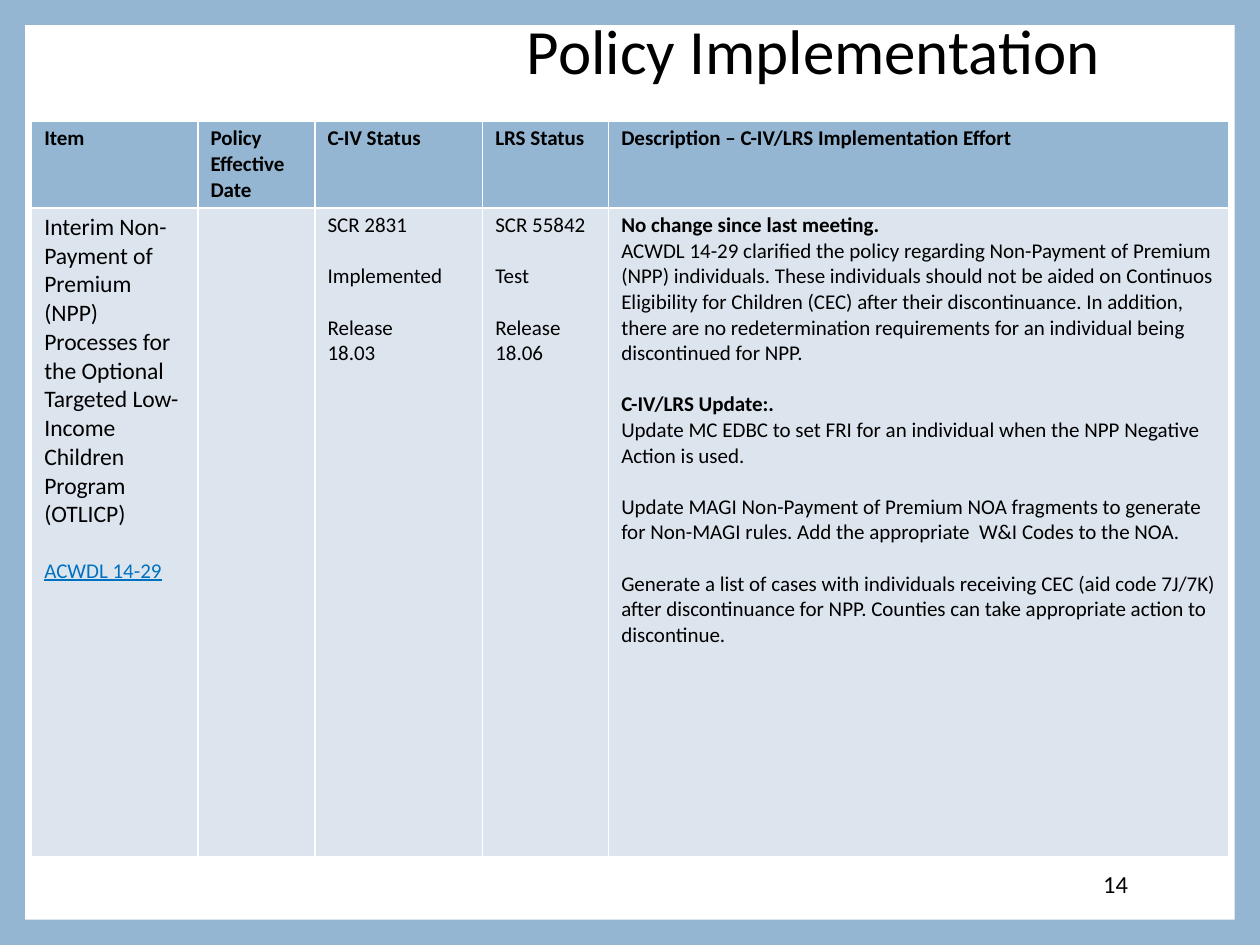
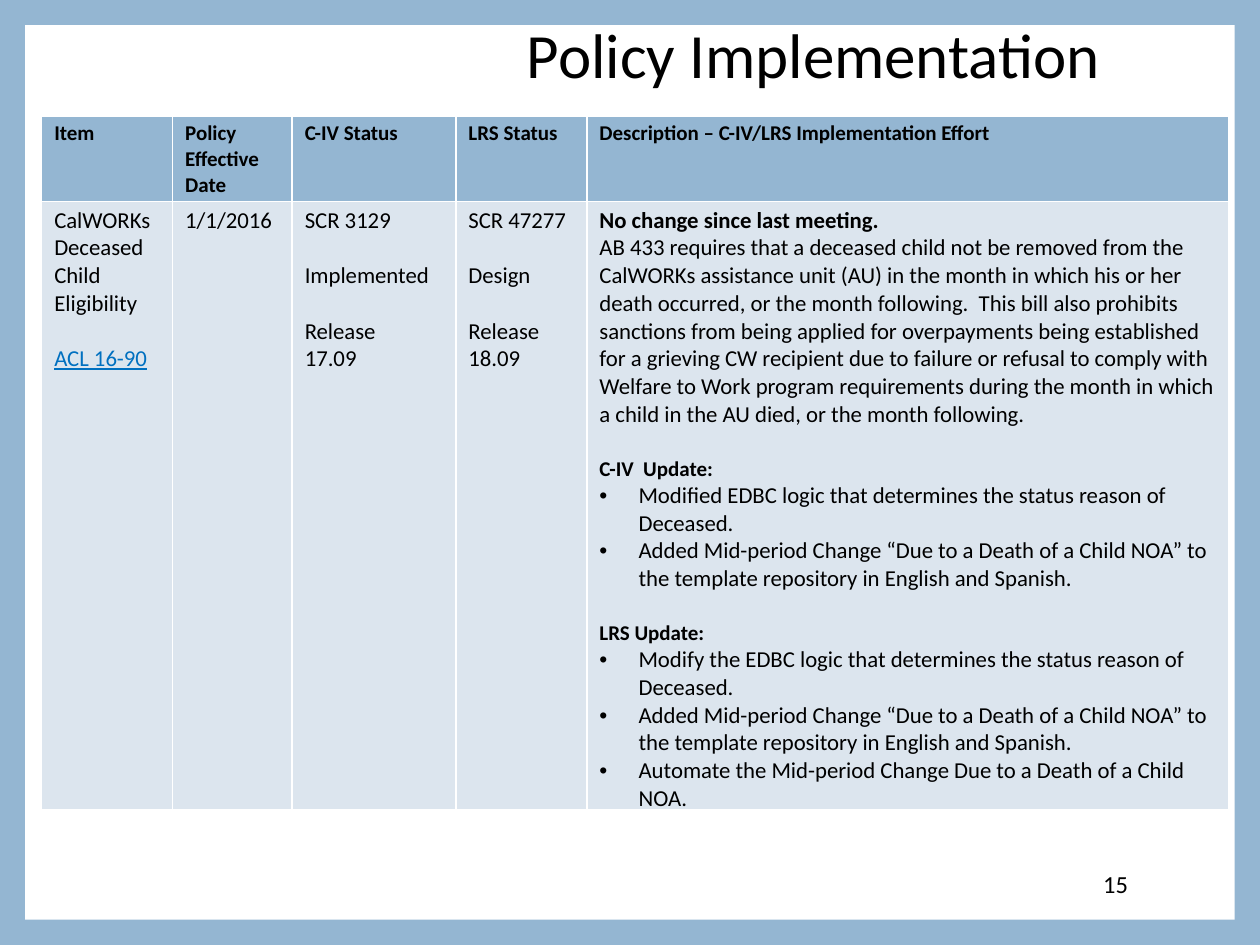
from lxml import etree
from pptx import Presentation
from pptx.dml.color import RGBColor
from pptx.enum.shapes import MSO_SHAPE
from pptx.enum.text import MSO_ANCHOR, PP_ALIGN
from pptx.oxml.ns import qn
from pptx.util import Cm, Pt

RECT = MSO_SHAPE.RECTANGLE
MIDDLE = MSO_ANCHOR.MIDDLE
LEFT, RIGHT = PP_ALIGN.LEFT, PP_ALIGN.RIGHT

FONT = "Calibri"
BLUE, PALE, WHITE = "94B6D2", "DCE5EE", "FFFFFF"
BLACK, LINK = "000000", "0070C0"
WIDTH, HEIGHT, EDGE = 25.4, 19.05, 0.51
LEADING = 1.22

HEADS = ["Item", "Policy Effective Date", "C-IV Status", "LRS Status",
         "Description – C-IV/LRS Implementation Effort"]
BOLD = {"bold": True}
GAP = {"gap": True}
HEAD = {"bold": True, "gap": True, "size": 12}
REF = {"color": LINK, "under": True, "gap": True, "size": 12}
DOT = {"bullet": True}


def paint(target, color):
    """Give a fill or a font a solid colour."""
    if hasattr(target, "solid"):
        target.solid()
        target = target.fore_color
    else:
        target = target.color
    target.rgb = RGBColor.from_string(color)


def dot(para):
    """Give a paragraph a hanging bullet."""
    props = para._p.get_or_add_pPr()
    props.set("marL", str(Cm(0.79)))
    props.set("indent", str(Cm(-0.79)))
    etree.SubElement(props, qn("a:buFont")).set("typeface", "Arial")
    etree.SubElement(props, qn("a:buChar")).set("char", "•")


def write_line(para, text, size=12, color=BLACK, bold=False, under=False,
               align=LEFT, lead=None, space=0, bullet=False):
    """Write one formatted paragraph."""
    para.alignment = align
    para.space_before = Pt(space)
    if lead:
        para.line_spacing = lead
    if bullet:
        dot(para)
    run = para.add_run()
    run.text = text
    font = run.font
    font.name, font.size, font.bold = FONT, Pt(size), bold
    font.underline = under
    paint(font, color)


def write(frame, lines, size=12, **form):
    """Fill a text frame with plain strings or (text, format) pairs."""
    frame.word_wrap = True
    for i, line in enumerate(lines):
        text, extra = (line, {}) if isinstance(line, str) else line
        extra = {"size": size, **form, **extra}
        space = round(size * LEADING, 2) if extra.pop("gap", False) else 0
        para = frame.add_paragraph() if i else frame.paragraphs[0]
        write_line(para, text, space=space, **extra)


def add_text(slide, box, text, **form):
    """Place a right-aligned, centred line of text in a box."""
    frame = slide.shapes.add_textbox(*map(Cm, box)).text_frame
    frame.vertical_anchor = MIDDLE
    write(frame, [text], align=RIGHT, **form)


def add_panel(slide):
    """Draw the white page inside the blue edge."""
    box = EDGE, EDGE, WIDTH - 2 * EDGE, HEIGHT - 2 * EDGE
    panel = slide.shapes.add_shape(RECT, *map(Cm, box))
    panel.shadow.inherit = False
    panel.line.fill.background()
    paint(panel.fill, WHITE)


def fill_cell(cell, color, lines, **form):
    """Set the fill, margins and text of a cell."""
    paint(cell.fill, color)
    cell.margin_top = cell.margin_bottom = Cm(0.1)
    write(cell.text_frame, lines, **form)


def add_grid(slide, spot, cols, rows, body, sizes):
    """Build the status table at a spot."""
    box = *spot, sum(cols), sum(rows)
    grid = slide.shapes.add_table(2, len(cols), *map(Cm, box)).table
    for row, high in zip(grid.rows, rows):
        row.height = Cm(high)
    for i, wide in enumerate(cols):
        grid.columns[i].width = Cm(wide)
        fill_cell(grid.cell(0, i), BLUE, [HEADS[i]], bold=True)
        fill_cell(grid.cell(1, i), PALE, body[i], size=sizes[i])


def add_page(deck, number, top, high, **grid):
    """Add a policy slide with its title, table and number."""
    slide = deck.slides.add_slide(deck.slide_layouts[6])
    add_panel(slide)
    add_text(slide, (1.27, top, 21.16, high), "Policy Implementation",
             size=36, lead=0.9)
    add_text(slide, (19.43, 17.3, 3.56, 1.02), str(number), size=14)
    add_grid(slide, **grid)


def status(code, state, release):
    """List the lines of a status cell."""
    return [code, (state, GAP), ("Release", GAP), release]


PREMIUM = [
    ["Interim Non-Payment of Premium (NPP) Processes for the Optional "
     "Targeted Low-Income Children Program (OTLICP)",
     ("ACWDL 14-29", REF)],
    [],
    status("SCR 2831", "Implemented", "18.03"),
    status("SCR 55842", "Test", "18.06"),
    [("No change since last meeting.", BOLD),
     "ACWDL 14-29 clarified the policy regarding Non-Payment of Premium "
     "(NPP) individuals. These individuals should not be aided on Continuos "
     "Eligibility for Children (CEC) after their discontinuance. In "
     "addition, there are no redetermination requirements for an individual "
     "being discontinued for NPP.",
     ("C-IV/LRS Update:.", HEAD),
     "Update MC EDBC to set FRI for an individual when the NPP Negative "
     "Action is used.",
     ("Update MAGI Non-Payment of Premium NOA fragments to generate for "
      "Non-MAGI rules. Add the appropriate  W&I Codes to the NOA.", GAP),
     ("Generate a list of cases with individuals receiving CEC (aid code "
      "7J/7K) after discontinuance for NPP. Counties can take appropriate "
      "action to discontinue.", GAP)],
]

NOTICE = ("Added Mid-period Change “Due to a Death of a Child NOA” to the "
          "template repository in English and Spanish.", DOT)
DECEASED = [
    ["CalWORKs Deceased Child Eligibility",
     ("ACL 16-90", {**REF, "size": 13})],
    ["1/1/2016"],
    status("SCR 3129", "Implemented", "17.09"),
    status("SCR 47277", "Design", "18.09"),
    [("No change since last meeting.", BOLD),
     "AB 433 requires that a deceased child not be removed from the "
     "CalWORKs assistance unit (AU) in the month in which his or her death "
     "occurred, or the month following.  This bill also prohibits sanctions "
     "from being applied for overpayments being established for a grieving "
     "CW recipient due to failure or refusal to comply with Welfare to Work "
     "program requirements during the month in which a child in the AU "
     "died, or the month following.",
     ("C-IV  Update:", HEAD),
     ("Modified EDBC logic that determines the status reason of Deceased.",
      DOT),
     NOTICE,
     ("LRS Update:", HEAD),
     ("Modify the EDBC logic that determines the status reason of Deceased.",
      DOT),
     NOTICE,
     ("Automate the Mid-period Change Due to a Death of a Child NOA.", DOT)],
]


def main():
    """Build and save the deck."""
    deck = Presentation()
    deck.slide_width, deck.slide_height = Cm(WIDTH), Cm(HEIGHT)
    paint(deck.slide_master.background.fill, BLUE)
    add_page(deck, 14, 0.2, 1.78, spot=(0.64, 2.44),
             cols=(3.35, 2.36, 3.38, 2.54, 12.5), rows=(1.75, 13.08),
             body=PREMIUM, sizes=(13.5, 12, 12, 12, 12))
    add_page(deck, 15, 0.43, 1.47, spot=(0.84, 2.34),
             cols=(2.64, 2.41, 3.3, 2.64, 12.95), rows=(1.7, 12.07),
             body=DECEASED, sizes=[13] * 5)
    deck.save("out.pptx")


if __name__ == "__main__":
    main()
